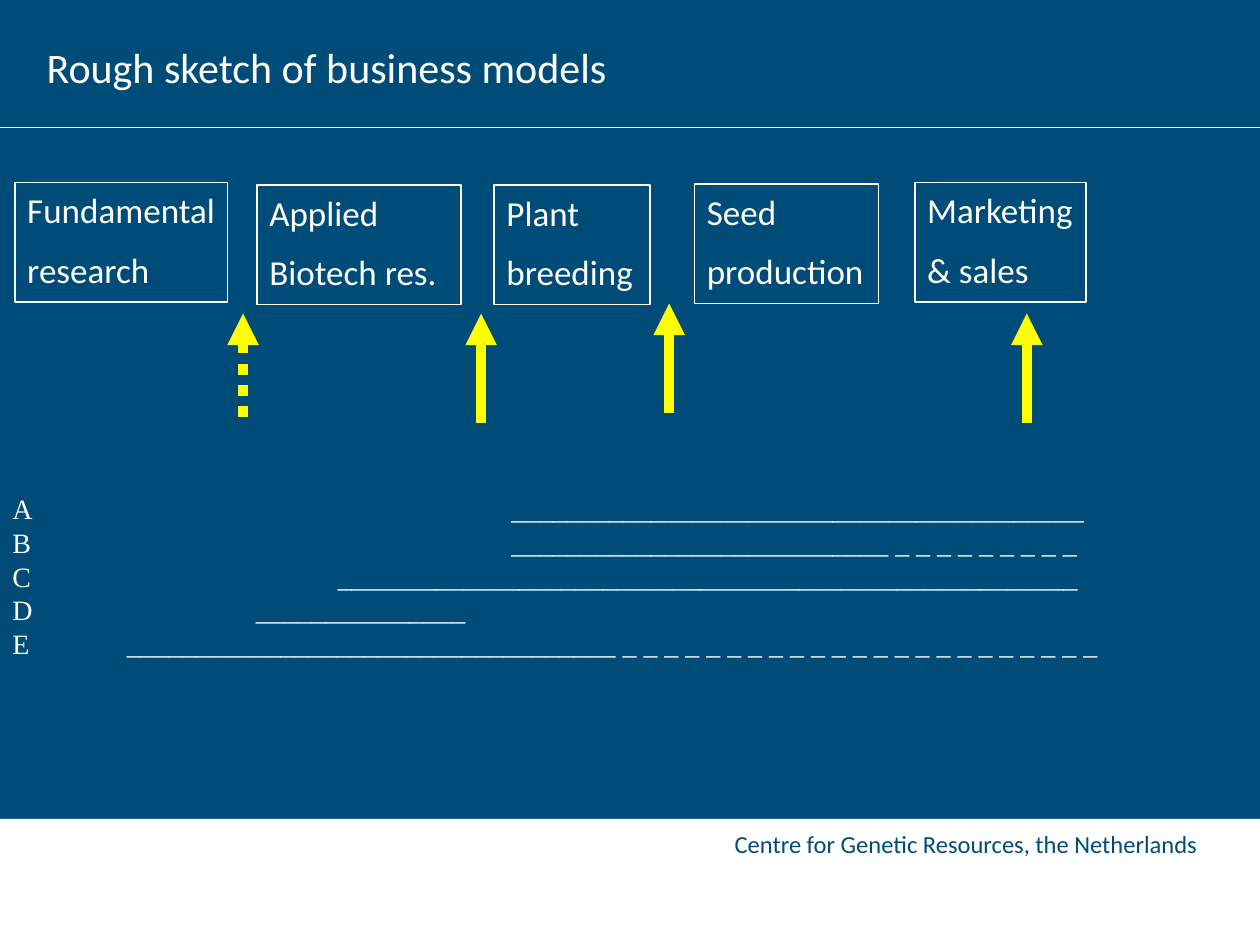
from lxml import etree
from pptx import Presentation
from pptx.dml.color import RGBColor
from pptx.enum.dml import MSO_LINE
from pptx.enum.shapes import MSO_CONNECTOR, MSO_SHAPE
from pptx.enum.text import MSO_ANCHOR, PP_ALIGN
from pptx.oxml.ns import qn
from pptx.util import Cm, Pt

RECT = MSO_SHAPE.RECTANGLE
STRAIGHT = MSO_CONNECTOR.STRAIGHT
DOTTED = MSO_LINE.ROUND_DOT  # written as sysDot
LEFT = PP_ALIGN.LEFT
TOP, MIDDLE = MSO_ANCHOR.TOP, MSO_ANCHOR.MIDDLE

COLORS = {"blue": "004C78", "white": "FFFFFF", "yellow": "FFFF00"}
SANS, SERIF = "Calibri", "Times New Roman"

# Stage text, left, top, width (cm)
STAGES = [
    (("Fundamental", "research"), 0.3, 3.68, 4.29),
    (("Applied", "Biotech res."), 5.18, 3.73, 4.11),
    (("Plant", "breeding"), 9.96, 3.73, 3.15),
    (("Seed", "production"), 14.0, 3.71, 3.71),
    (("Marketing", "& sales"), 18.44, 3.68, 3.45),
]
STAGE_HEIGHT = 2.41

# Arrow x, top (cm), dash style
ARROWS = [
    (4.9, 6.32, DOTTED),
    (9.7, 6.32, None),
    (13.49, 6.12, None),
    (20.7, 6.32, None),
]
ARROW_LENGTH = 2.21

# Model, start of its bar (cm), solid units, dashed units
MODELS = [
    ("A", 10.06, 41, 0),
    ("B", 10.06, 27, 9),
    ("C", 6.56, 53, 0),
    ("D", 4.91, 15, 0),
    ("E", 2.31, 35, 23),
]


def rgb(name):
    return RGBColor.from_string(COLORS[name])


def set_font(p, name, size, color):
    p.font.name = name
    p.font.size = Pt(size)
    p.font.color.rgb = rgb(color)


def write_lines(tf, lines, size, color="white", gap=0):
    for i, line in enumerate(lines):
        p = tf.paragraphs[0] if i == 0 else tf.add_paragraph()
        p.text = line
        p.alignment = LEFT
        if i:
            p.space_before = Pt(gap)
        set_font(p, SANS, size, color)


def add_rect(slide, left, top, width, height, fill=None, line=None):
    sp = slide.shapes.add_shape(RECT, Cm(left), Cm(top), Cm(width), Cm(height))
    sp.shadow.inherit = False
    if fill:
        sp.fill.solid()
        sp.fill.fore_color.rgb = rgb(fill)
    else:
        sp.fill.background()
    if line:
        sp.line.color.rgb = rgb(line)
        sp.line.width = Pt(1)
    else:
        sp.line.fill.background()
    return sp


def add_stage(slide, lines, left, top, width):
    tf = add_rect(slide, left, top, width, STAGE_HEIGHT, line="white").text_frame
    tf.word_wrap = False
    tf.vertical_anchor = TOP
    write_lines(tf, lines, 20, gap=10)


def add_text(slide, text, left, top, width, height, size, color="white"):
    tf = slide.shapes.add_textbox(Cm(left), Cm(top), Cm(width), Cm(height)).text_frame
    tf.word_wrap = False
    write_lines(tf, [text], size, color)
    return tf


def add_line(slide, x1, y1, x2, y2, color, width):
    cn = slide.shapes.add_connector(STRAIGHT, Cm(x1), Cm(y1), Cm(x2), Cm(y2))
    cn.line.color.rgb = rgb(color)
    cn.line.width = Pt(width)
    etree.SubElement(cn._element.spPr, qn("a:effectLst"))
    return cn


def add_arrow(slide, x, top, dash):
    cn = add_line(slide, x, top, x, top + ARROW_LENGTH, "yellow", 6)
    if dash:
        cn.line.dash_style = dash
    ln = cn.line._get_or_add_ln()
    etree.SubElement(ln, qn("a:headEnd"), type="triangle")


def add_models(slide):
    sp = slide.shapes.add_textbox(Cm(0), Cm(9.78), Cm(22.5), Cm(3.66))
    tf = sp.text_frame
    tf.word_wrap = True
    tf.vertical_anchor = MIDDLE
    for i, (name, start, solid, dashed) in enumerate(MODELS):
        p = tf.paragraphs[0] if i == 0 else tf.add_paragraph()
        p.text = f"{name}\t{'_' * solid}{' _' * dashed}"
        tabs = etree.SubElement(p._p.get_or_add_pPr(), qn("a:tabLst"))
        etree.SubElement(tabs, qn("a:tab"), pos=str(Cm(start)), algn="l")
        set_font(p, SERIF, 16, "white")


def main():
    prs = Presentation()
    prs.slide_width, prs.slide_height = Cm(25.4), Cm(19.05)
    slide = prs.slides.add_slide(prs.slide_layouts[6])
    slide.background.fill.solid()
    slide.background.fill.fore_color.rgb = rgb("blue")

    # Header rule and footer band
    add_line(slide, 0, 2.57, 25.4, 2.57, "white", 1)
    add_rect(slide, 0, 16.51, 25.4, 2.54, fill="white")
    tf = add_text(slide, "Centre for Genetic Resources, the Netherlands",
                  14.81, 16.71, 9.93, 0.58, 14, "blue")
    tf.margin_left = tf.margin_top = tf.margin_bottom = 0

    # Title
    add_text(slide, "Rough sketch of business models", 0.69, 0.71, 12.93, 1.27, 24)

    # Stages of the chain, with arrows below
    for stage in STAGES:
        add_stage(slide, *stage)
    for arrow in ARROWS:
        add_arrow(slide, *arrow)

    # Span of each business model
    add_models(slide)

    prs.save("out.pptx")


if __name__ == "__main__":
    main()
